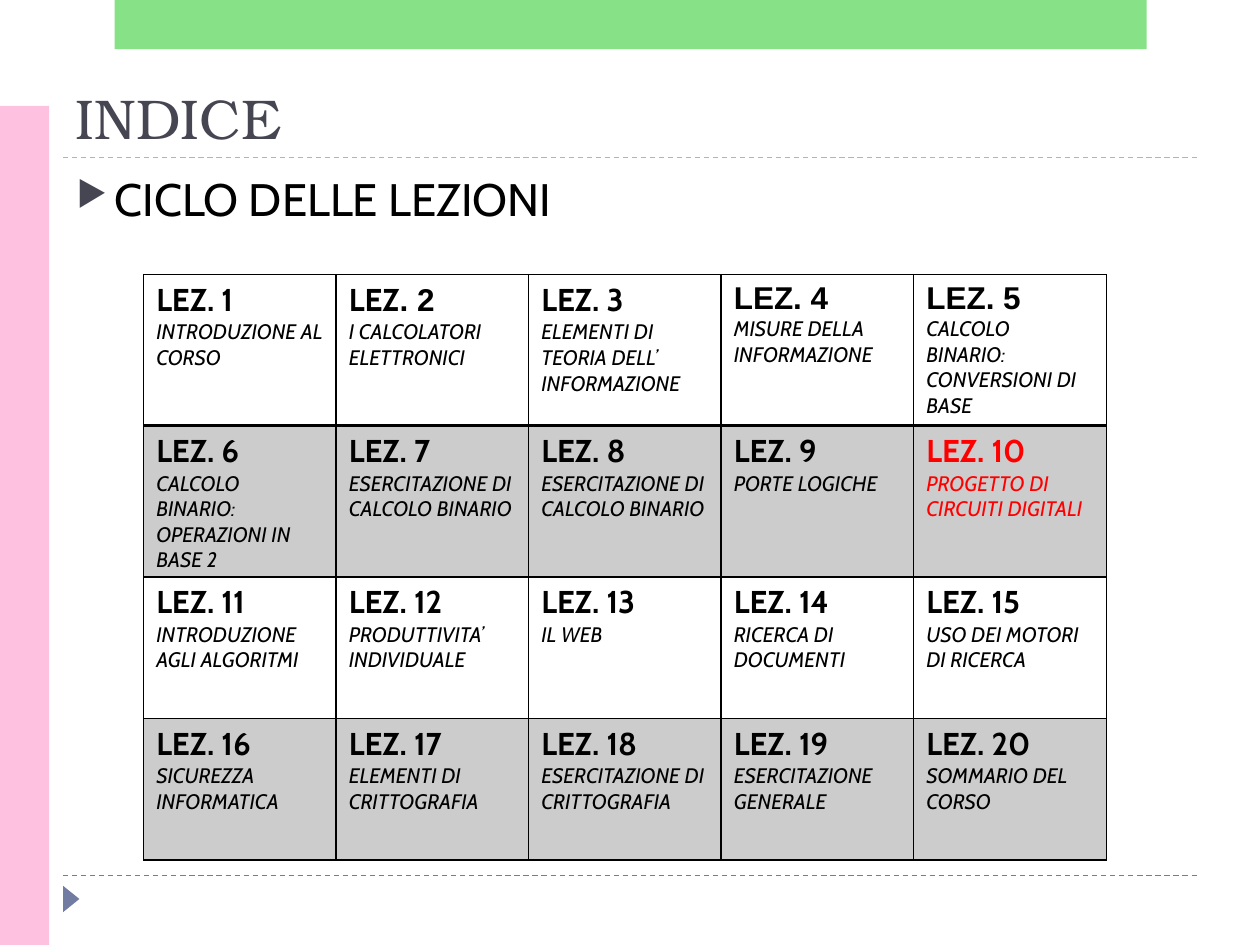
"""Build the course index slide with its table of twenty lessons."""
from dataclasses import dataclass
from typing import Optional

from lxml import etree
from pptx import Presentation
from pptx.dml.color import RGBColor
from pptx.enum.dml import MSO_LINE
from pptx.enum.shapes import MSO_CONNECTOR, MSO_SHAPE
from pptx.enum.text import MSO_ANCHOR, MSO_AUTO_SIZE, PP_ALIGN
from pptx.oxml.ns import qn
from pptx.util import Inches, Pt

RECT = MSO_SHAPE.RECTANGLE
TRIANGLE = MSO_SHAPE.ISOSCELES_TRIANGLE
STRAIGHT = MSO_CONNECTOR.STRAIGHT
DASH = MSO_LINE.DASH
LEFT = PP_ALIGN.LEFT
BOTTOM = MSO_ANCHOR.BOTTOM
NO_FIT = MSO_AUTO_SIZE.NONE

COLORS = {
    "slate": "727CA3",
    "mist": "9FB8CD",
    "pink": "FFC1E0",
    "green": "62D862",
    "title": "464653",
    "black": "000000",
    "red": "FF0000",
}
BODY_FONT = "Cabin"
TITLE_FONT = "TeX Gyre Bonum"
ALT_FONT = "Arial"
COLUMNS, ROWS = 5, 4
CURRENT_LESSON = 10


@dataclass
class Decoration:
    shape: int
    left: float
    top: float
    width: float
    height: float
    color: str
    rotation: int = 0
    alpha: Optional[int] = None


@dataclass
class Divider:
    y: float
    color: str


@dataclass
class Lesson:
    topic: str
    alt_font_from: Optional[int] = None


DIVIDERS = [Divider(6.95, "slate"), Divider(1.25, "mist")]
DECORATIONS = [
    Decoration(TRIANGLE, 0.46, 7.07, 0.21, 0.13, "slate", rotation=90),
    Decoration(RECT, 0, 0.84, 0.39, 6.66, "pink"),
    Decoration(RECT, 0.91, 0, 8.19, 0.39, "green", alpha=76),
]
LESSONS = [
    Lesson("INTRODUZIONE AL CORSO"),
    Lesson("I CALCOLATORI \vELETTRONICI", alt_font_from=3),
    Lesson("ELEMENTI DI TEORIA DELL’\vINFORMAZIONE"),
    Lesson("MISURE DELLA INFORMAZIONE", alt_font_from=0),
    Lesson("CALCOLO BINARIO: CONVERSIONI DI BASE", alt_font_from=0),
    Lesson("CALCOLO BINARIO: OPERAZIONI IN BASE 2"),
    Lesson("ESERCITAZIONE DI CALCOLO BINARIO"),
    Lesson("ESERCITAZIONE DI CALCOLO BINARIO"),
    Lesson("PORTE LOGICHE"),
    Lesson("PROGETTO DI CIRCUITI DIGITALI"),
    Lesson("INTRODUZIONE AGLI ALGORITMI"),
    Lesson("PRODUTTIVITA’ INDIVIDUALE"),
    Lesson("IL WEB"),
    Lesson("RICERCA DI DOCUMENTI"),
    Lesson("USO DEI MOTORI DI RICERCA"),
    Lesson("SICUREZZA INFORMATICA"),
    Lesson("ELEMENTI DI CRITTOGRAFIA"),
    Lesson("ESERCITAZIONE DI CRITTOGRAFIA"),
    Lesson("ESERCITAZIONE GENERALE"),
    Lesson("SOMMARIO DEL CORSO"),
]


def rgb(name: str) -> RGBColor:
    return RGBColor.from_string(COLORS[name])


def set_fill(fill, element, color: str, alpha: Optional[int] = None) -> None:
    fill.solid()
    fill.fore_color.rgb = rgb(color)
    if alpha is not None:
        node = element.find(f".//{qn('a:solidFill')}/{qn('a:srgbClr')}")
        etree.SubElement(node, qn("a:alpha"), val=str(alpha * 1000))


def format_run(r, size: float, color: str, font: str = BODY_FONT,
               bold: bool = False, italic: bool = False) -> None:
    r.font.size, r.font.name = Pt(size), font
    r.font.bold, r.font.italic = bold, italic
    r.font.color.rgb = rgb(color)


def add_decoration(slide, d: Decoration) -> None:
    s = slide.shapes.add_shape(d.shape, Inches(d.left), Inches(d.top),
                               Inches(d.width), Inches(d.height))
    s.shadow.inherit = False
    s.rotation = d.rotation
    set_fill(s.fill, s._element, d.color, d.alpha)
    s.line.fill.background()


def add_divider(slide, d: Divider) -> None:
    s = slide.shapes.add_connector(STRAIGHT, Inches(0.5), Inches(d.y),
                                   Inches(9.5), Inches(d.y))
    s.line.color.rgb = rgb(d.color)
    s.line.width = Pt(0.75)
    s.line.dash_style = DASH
    etree.SubElement(s._element.spPr, qn("a:effectLst"))


def add_title(slide, text: str) -> None:
    s = slide.shapes.title
    s.left, s.top, s.width, s.height = map(Inches, (0.5, 0.55, 9, 0.7))
    tf = s.text_frame
    tf.text = text
    tf.auto_size = NO_FIT
    tf.vertical_anchor = BOTTOM
    p = tf.paragraphs[0]
    p.alignment = LEFT
    format_run(p.runs[0], 32, "title", TITLE_FONT)


def add_subtitle(slide, text: str) -> None:
    s = slide.shapes.add_textbox(Inches(0.51), Inches(1.31), Inches(9), Inches(0.79))
    tf = s.text_frame
    tf.word_wrap = True
    tf.text = text
    p = tf.paragraphs[0]
    p_pr = p._p.get_or_add_pPr()
    p_pr.set("marL", str(Inches(0.3)))
    p_pr.set("indent", str(Inches(-0.3)))
    bullet_color = etree.SubElement(p_pr, qn("a:buClr"))
    etree.SubElement(bullet_color, qn("a:srgbClr"), val=COLORS["title"])
    etree.SubElement(p_pr, qn("a:buSzPct"), val="76000")
    etree.SubElement(p_pr, qn("a:buChar"), char="▶")
    format_run(p.runs[0], 26, "black")


def set_borders(cell, top: float, bottom: float) -> None:
    tc_pr = cell._tc.get_or_add_tcPr()
    for i, (side, width) in enumerate(zip("LRTB", (1, 1, top, bottom))):
        ln = etree.Element(qn(f"a:ln{side}"), w=str(Pt(width)))
        fill = etree.SubElement(ln, qn("a:solidFill"))
        etree.SubElement(fill, qn("a:srgbClr"), val=COLORS["black"])
        tc_pr.insert(i, ln)


def write_lesson(cell, number: int, lesson: Lesson) -> None:
    color = "red" if number == CURRENT_LESSON else "black"
    heading = f"LEZ. {number}"
    split = len(heading) if lesson.alt_font_from is None else lesson.alt_font_from
    tf = cell.text_frame
    p = tf.paragraphs[0]
    for text, font in ((heading[:split], BODY_FONT), (heading[split:], ALT_FONT)):
        if text:
            r = p.add_run()
            r.text = text
            format_run(r, 18, color, font, bold=True)
    p = tf.add_paragraph()
    p.text = lesson.topic
    for r in p.runs:
        format_run(r, 12, color, italic=True)


def add_lessons(slide) -> None:
    table = slide.shapes.add_table(ROWS, COLUMNS, Inches(1.14), Inches(2.18),
                                   Inches(7.64), Inches(4.49)).table
    table.first_row = table.horz_banding = False
    for i, lesson in enumerate(LESSONS):
        row, column = divmod(i, COLUMNS)
        cell = table.cell(row, column)
        if row % 2:
            set_fill(cell.fill, cell._tc, "black", 20)
        else:
            cell.fill.background()
        set_borders(cell, 2 if row == 1 else 1, 2 if row == 0 else 1)
        write_lesson(cell, i + 1, lesson)


def main() -> None:
    prs = Presentation()
    prs.slide_width, prs.slide_height = Inches(10), Inches(7.5)
    slide = prs.slides.add_slide(prs.slide_layouts[5])
    for divider in DIVIDERS:
        add_divider(slide, divider)
    for decoration in DECORATIONS:
        add_decoration(slide, decoration)
    add_title(slide, "INDICE")
    add_subtitle(slide, "CICLO DELLE LEZIONI")
    add_lessons(slide)
    prs.save("out.pptx")


if __name__ == "__main__":
    main()
